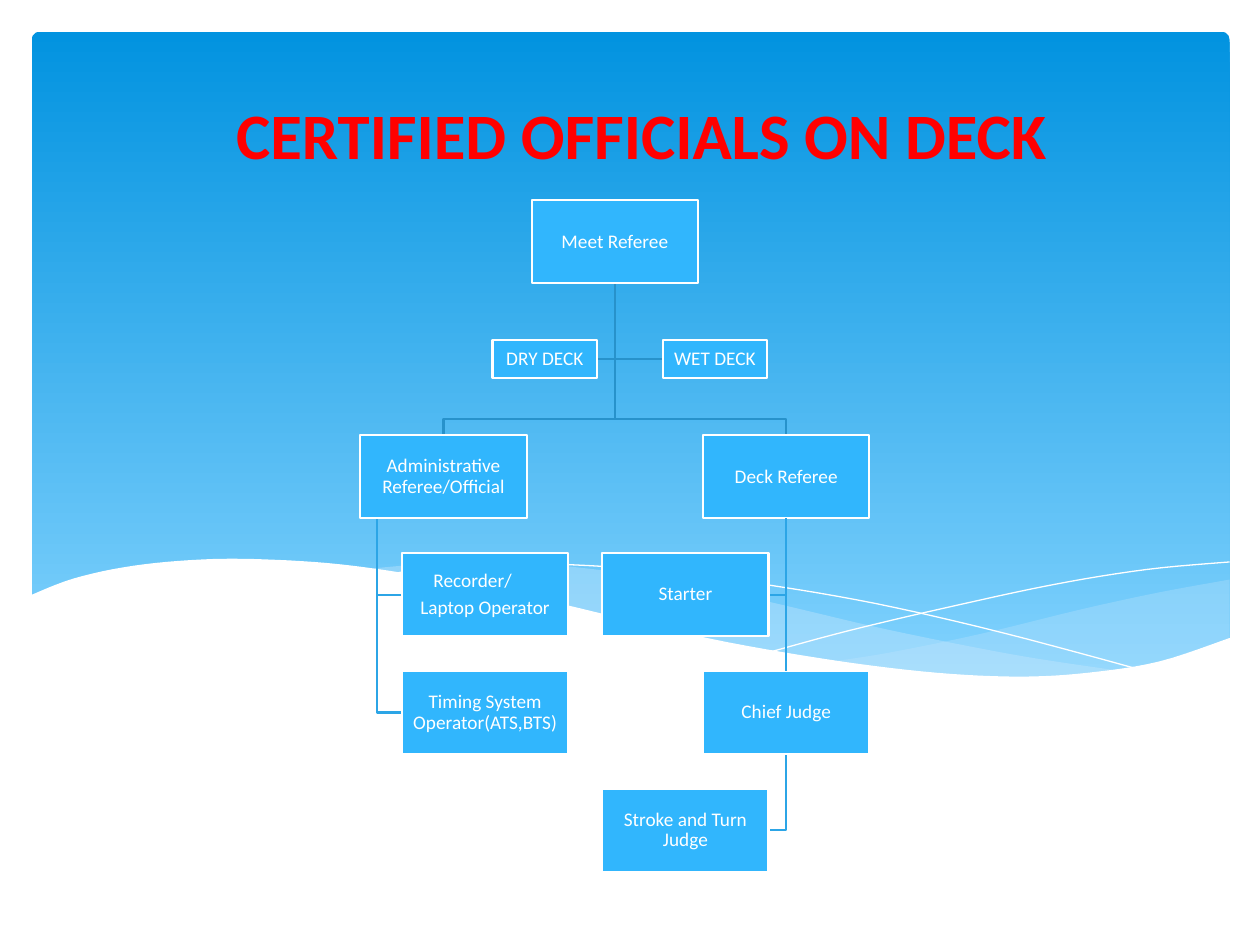
from lxml import etree
from pptx import Presentation
from pptx.dml.color import RGBColor
from pptx.enum.shapes import MSO_CONNECTOR, MSO_SHAPE
from pptx.enum.text import MSO_ANCHOR, PP_ALIGN
from pptx.oxml.ns import qn
from pptx.util import Inches, Pt

RECTANGLE, ROUNDED = MSO_SHAPE.RECTANGLE, MSO_SHAPE.ROUNDED_RECTANGLE
STRAIGHT = MSO_CONNECTOR.STRAIGHT
CENTER, LEFT = PP_ALIGN.CENTER, PP_ALIGN.LEFT
MIDDLE, BOTTOM = MSO_ANCHOR.MIDDLE, MSO_ANCHOR.BOTTOM
SIDE_TOP, SIDE_BOTTOM = 0, 2
FONT = "Calibri"
COLORS = {
    "sky_top": "0293E0", "sky_bottom": "83D3FE", "wave": "C6E7FC",
    "white": "FFFFFF", "title": "FF0000", "box": "31B6FD",
    "upper_line": "2792CB", "lower_line": "2CA5E6",
}


def rgb(name):
    return RGBColor.from_string(COLORS[name])


def smooth(points, steps=6):
    padded = [points[0], *points, points[-1]]
    curve = [points[0]]
    for p0, p1, p2, p3 in zip(padded, padded[1:], padded[2:], padded[3:]):
        for step in range(1, steps + 1):
            t = step / steps
            curve.append(tuple(
                b + t / 2 * (c - a + t * (2 * a - 5 * b + 4 * c - d
                                          + t * (3 * (b - c) + d - a)))
                for a, b, c, d in zip(p0, p1, p2, p3)))
    return curve


def add_outline(slide, points, fill=None, line=None, width=0, alpha=None):
    corners = [(Inches(x), Inches(y)) for x, y in points]
    builder = slide.shapes.build_freeform(*corners[0])
    builder.add_line_segments(corners[1:], close=fill is not None)
    outline = builder.convert_to_shape()
    outline.shadow.inherit = False
    if fill:
        outline.fill.solid()
        outline.fill.fore_color.rgb = rgb(fill)
    else:
        outline.fill.background()
    if line:
        outline.line.color.rgb = rgb(line)
        outline.line.width = Pt(width)
    else:
        outline.line.fill.background()
    if alpha:
        color = outline.fill._xPr.find(".//" + qn("a:srgbClr"))
        etree.SubElement(color, qn("a:alpha")).set("val", str(alpha * 1000))


def add_backdrop(slide, left, top, width, height):
    sky = slide.shapes.add_shape(ROUNDED, Inches(left), Inches(top),
                                 Inches(width), Inches(height))
    sky.adjustments[0] = 0.013
    sky.shadow.inherit = False
    sky.line.fill.background()
    sky.fill.gradient()
    sky.fill.gradient_angle = 270
    for stop, name in zip(sky.fill.gradient_stops, ("sky_top", "sky_bottom")):
        stop.color.rgb = rgb(name)

    right, bottom = left + width, top + height
    right_wave = (smooth([(right, 4.6), (9.21, 4.7), (8.61, 4.83), (7.79, 5.03),
                          (7.06, 5.18), (6.61, 5.25)])
                  + smooth([(6.61, 5.25), (7.05, 5.31), (7.57, 5.36),
                            (8.14, 5.38), (8.72, 5.34), (9.28, 5.24),
                            (right, 5.07)]))
    middle_wave = (smooth([(8.93, 5.33), (8.07, 5.2), (7.06, 5), (6.29, 4.82),
                           (5.55, 4.65), (4.89, 4.54), (4.2, 4.47),
                           (3.61, 4.46), (2.86, 4.52)])
                   + smooth([(2.86, 4.52), (3.62, 4.63), (4.49, 4.82),
                             (5.3, 5.01), (6.01, 5.15), (6.8, 5.28),
                             (7.48, 5.36), (8.07, 5.39), (8.93, 5.33)]))
    falling_crest = smooth([(3.09, 4.56), (3.44, 4.5), (4.01, 4.47),
                            (4.69, 4.49), (5.33, 4.54), (6.08, 4.64),
                            (6.95, 4.79), (7.95, 5.02), (9.07, 5.32)])
    rising_crest = smooth([(6.13, 5.17), (6.72, 5.01), (7.48, 4.83),
                           (8.36, 4.64), (9.1, 4.52), (right, 4.46)])
    shore = smooth([(right + 0.01, 5.06), (9.2, 5.25), (8.63, 5.34),
                    (8.09, 5.37), (7.44, 5.34), (6.68, 5.25), (5.79, 5.1),
                    (5.03, 4.93), (4.18, 4.73), (3.4, 4.58), (2.71, 4.48),
                    (2.11, 4.44), (1.61, 4.44), (1.06, 4.49), (0.59, 4.59),
                    (left - 0.02, 4.73)])
    add_outline(slide, right_wave, fill="wave", alpha=29)
    add_outline(slide, middle_wave, fill="wave", alpha=40)
    add_outline(slide, falling_crest, line="white")
    add_outline(slide, rising_crest, line="white")
    add_outline(slide, shore + [(left - 0.02, bottom + 0.46),
                                (right + 0.01, bottom + 0.46)], fill="white")


def add_title(slide, left, top, width, height):
    title = slide.shapes.title
    slide.shapes._spTree.append(title._element)
    title.left, title.top = Inches(left), Inches(top)
    title.width, title.height = Inches(width), Inches(height)
    frame = title.text_frame
    frame.text = "CERTIFIED OFFICIALS ON DECK"
    frame.vertical_anchor = BOTTOM
    frame.paragraphs[0].alignment = CENTER
    font = frame.paragraphs[0].runs[0].font
    font.name, font.size, font.bold = FONT, Pt(37), True
    font.color.rgb = rgb("title")


def add_box(slide, text, left, top, width, height):
    box = slide.shapes.add_shape(RECTANGLE, Inches(left), Inches(top),
                                 Inches(width), Inches(height))
    box.shadow.inherit = False
    box.fill.solid()
    box.fill.fore_color.rgb = rgb("box")
    box.line.color.rgb = rgb("white")
    box.line.width = Pt(1.25)
    frame = box.text_frame
    frame.word_wrap = True
    frame.vertical_anchor = MIDDLE
    frame.margin_left = frame.margin_right = Inches(0.01)
    frame.margin_top = frame.margin_bottom = Inches(0.01)
    frame.text = text
    for paragraph in frame.paragraphs:
        paragraph.alignment = CENTER
        paragraph.line_spacing = 0.9
        paragraph.space_after = Pt(4)
        font = paragraph.runs[0].font
        font.name, font.size = FONT, Pt(11)
        font.color.rgb = rgb("white")
    return box


def add_org_chart(slide, left, top, width, height):
    box_w, box_h, label_w, label_h = 1.32, 0.66, 0.83, 0.3
    rows = [top] + [top + height - box_h - 0.935 * up for up in (3, 2, 1, 0)]
    admin_x, deck_x = left, left + width - box_w
    trunk = left + width / 2
    recorder_x, starter_x = left + 0.33, deck_x - 0.8
    dry_x, wet_x = trunk - 0.14 - label_w, trunk + 0.38
    label_y = top + 1.11
    label_mid = label_y + label_h / 2
    trunk_top, bus = top + box_h, rows[1] - 0.13
    rail, deck_mid = admin_x + box_w / 10, deck_x + box_w / 2

    def branch(x, row, end):
        start_y, end_y = rows[row - 1] + box_h, rows[row] + box_h / 2
        return [(x, start_y), (x, end_y), (end, end_y)]

    upper_routes = [[(trunk, trunk_top), (trunk, label_mid), (end, label_mid)]
                    for end in (wet_x, dry_x + label_w)]
    upper_routes += [[(trunk, trunk_top), (trunk, bus), (x, bus), (x, rows[1])]
                     for x in (deck_mid, admin_x + box_w / 2)]
    timing_y = rows[3] + box_h / 2
    lower_routes = [
        branch(deck_mid, 2, starter_x + box_w),
        branch(deck_mid, 4, starter_x + box_w),
        [(rail, rows[1] + box_h), (rail, timing_y), (recorder_x, timing_y)],
        branch(rail, 2, recorder_x),
    ]
    for color, routes in (("upper_line", upper_routes), ("lower_line", lower_routes)):
        for route in routes:
            add_outline(slide, route, line=color, width=1.25)

    officials = [
        ("Meet Referee", trunk - box_w / 2, 0),
        ("Administrative Referee/Official", admin_x, 1),
        ("Recorder/\nLaptop Operator", recorder_x, 2),
        ("Timing System Operator(ATS,BTS)", recorder_x, 3),
        ("Deck Referee", deck_x, 1),
        ("Chief Judge", deck_x, 3),
        ("Stroke and Turn Judge", starter_x, 4),
        ("Starter", starter_x, 2),
    ]
    boxes = {text: add_box(slide, text, x, rows[row], box_w, box_h)
             for text, x, row in officials}
    for text, x in (("DRY DECK", dry_x), ("WET DECK", wet_x)):
        add_box(slide, text, x, label_y, label_w, label_h)

    recorder = boxes["Recorder/\nLaptop Operator"].text_frame.paragraphs[0]
    recorder.alignment = LEFT
    recorder._p.get_or_add_pPr().set("marL", str(Inches(0.24)))

    deck_link = slide.shapes.add_connector(STRAIGHT, 0, 0, 0, 0)
    deck_link.begin_connect(boxes["Deck Referee"], SIDE_BOTTOM)
    deck_link.end_connect(boxes["Chief Judge"], SIDE_TOP)
    deck_link.line.color.rgb = rgb("lower_line")
    deck_link.line.width = Pt(1.25)
    etree.SubElement(deck_link._element.spPr, qn("a:effectLst"))


def main():
    deck = Presentation()
    deck.slide_width, deck.slide_height = Inches(10), Inches(7.5)
    slide = deck.slides.add_slide(deck.slide_layouts[5])
    add_backdrop(slide, 0.25, 0.25, 9.51, 5.18)
    add_title(slide, 1.58, 0.39, 7.02, 1.03)
    add_org_chart(slide, 2.86, 1.59, 4.04, 5.33)
    deck.save("out.pptx")


if __name__ == "__main__":
    main()
